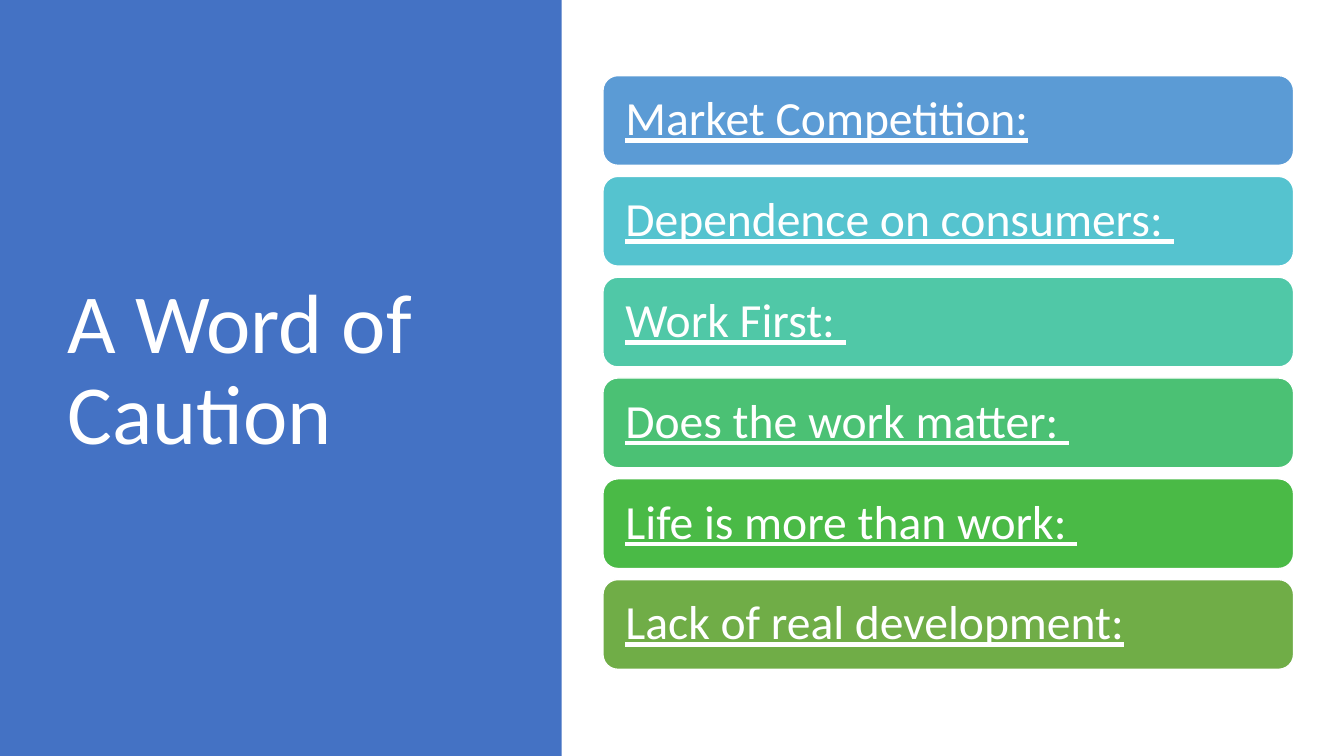
import pptx
import pptx.dml.color
import pptx.enum.shapes
import pptx.enum.text
import pptx.util

Inches = pptx.util.Inches
Pt = pptx.util.Pt
SHAPE = pptx.enum.shapes.MSO_SHAPE

COLORS = {"white": "FFFFFF", "panel": "4472C4"}
CAUTIONS = [
    ("Market Competition:", "5B9BD5"),
    ("Dependence on consumers: ", "55C3CF"),
    ("Work First: ", "50C8A7"),
    ("Does the work matter: ", "4BC174"),
    ("Life is more than work: ", "4ABA46"),
    ("Lack of real development:", "70AD47"),
]
TITLE_FONT = {"name": "Calibri", "size": Pt(60)}
BAR_FONT = {"name": "Calibri", "size": Pt(34), "underline": True}
FRAME = {"word_wrap": True, "vertical_anchor": pptx.enum.text.MSO_ANCHOR.MIDDLE}
BAR_FRAME = {
    **FRAME,
    "margin_left": Inches(0.18),
    "margin_right": Inches(0.18),
    "margin_top": Inches(0.14),
    "margin_bottom": Inches(0.14),
}
PARAGRAPH = {"alignment": pptx.enum.text.PP_ALIGN.LEFT, "line_spacing": 0.9}


def rgb(value):
    """Turn a hex string into a colour."""
    return pptx.dml.color.RGBColor.from_string(value)


def apply(target, values):
    """Set every attribute in values on the target."""
    for name, value in values.items():
        setattr(target, name, value)


def write(sp, text, frame, font):
    """Write one white paragraph into a shape."""
    tf = sp.text_frame
    apply(tf, frame)
    p = tf.paragraphs[0]
    apply(p, PARAGRAPH)
    r = p.add_run()
    r.text = text
    apply(r.font, font)
    r.font.color.rgb = rgb(COLORS["white"])


def add_block(s, kind, box, fill):
    """Add a filled shape without outline or shadow."""
    sp = s.shapes.add_shape(kind, *map(Inches, box))
    sp.shadow.inherit = False
    sp.fill.solid()
    sp.fill.fore_color.rgb = rgb(fill)
    sp.line.fill.background()
    return sp


def add_title(s, text, box):
    """Place and format the title placeholder."""
    title = s.shapes.title
    apply(title, dict(zip(("left", "top", "width", "height"), map(Inches, box))))
    write(title, text, FRAME, TITLE_FONT)
    return title


def add_bar(s, top, text, fill):
    """Add one rounded caution bar."""
    sp = add_block(s, SHAPE.ROUNDED_RECTANGLE, (5.98, top, 6.85, 0.89), fill)
    sp.line.color.rgb = rgb(COLORS["white"])
    sp.line.width = Pt(1)
    write(sp, text, BAR_FRAME, BAR_FONT)


def main():
    """Build the slide and save it."""
    prs = pptx.Presentation()
    prs.slide_width, prs.slide_height = Inches(13.33), Inches(7.5)
    s = prs.slides.add_slide(prs.slide_layouts[5])
    title = add_title(s, "A Word of Caution", (0.57, 0.68, 4.16, 6.02))
    panel = add_block(s, SHAPE.RECTANGLE, (0, 0, 5.57, 7.5), COLORS["panel"])
    title.element.addprevious(panel.element)
    for i, (text, fill) in enumerate(CAUTIONS):
        add_bar(s, 0.75 + i, text, fill)
    prs.save("out.pptx")


if __name__ == "__main__":
    main()
